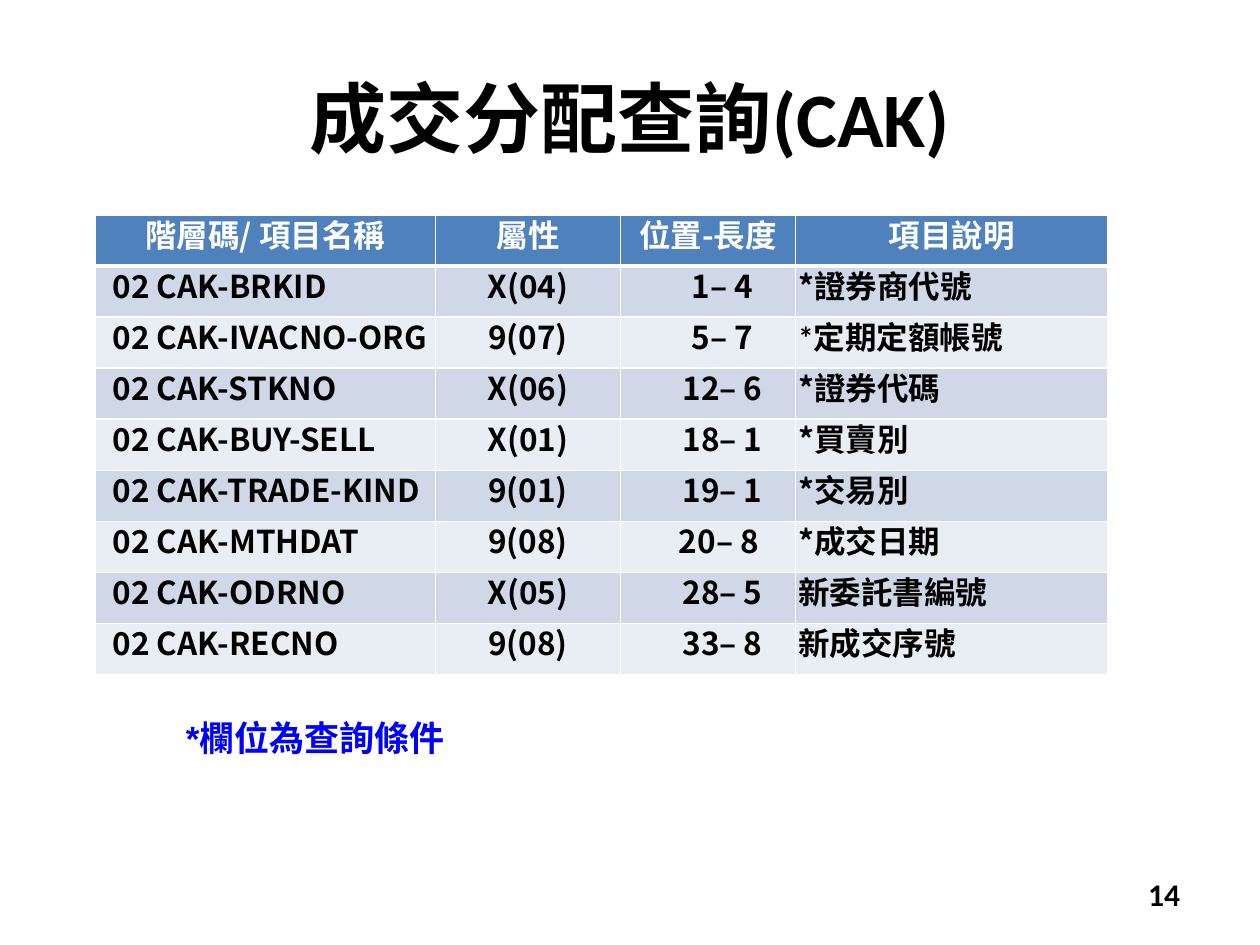
from lxml.etree import SubElement
from pptx import Presentation
from pptx.dml.color import RGBColor
from pptx.enum.text import MSO_ANCHOR, PP_ALIGN
from pptx.oxml import parse_xml
from pptx.oxml.ns import qn
from pptx.util import Cm, Pt

TITLE = "成交分配查詢(CAK)"
HEADERS = ["階層碼/ 項目名稱", "屬性", "位置-長度", "項目說明"]
ROWS = [
    ("02 CAK-BRKID", "X(04)", "1– 4", "*證券商代號"),
    ("02 CAK-IVACNO-ORG", "9(07)", "5– 7", "*定期定額帳號"),
    ("02 CAK-STKNO", "X(06)", "12– 6", "*證券代碼"),
    ("02 CAK-BUY-SELL", "X(01)", "18– 1", "*買賣別"),
    ("02 CAK-TRADE-KIND", "9(01)", "19– 1", "*交易別"),
    ("02 CAK-MTHDAT", "9(08)", "20– 8 ", "*成交日期"),
    ("02 CAK-ODRNO", "X(05)", "28– 5", "新委託書編號"),
    ("02 CAK-RECNO", "9(08)", "33– 8", "新成交序號"),
]
NOTE = "*欄位為查詢條件"
PAGE_NUMBER = "14"

SC, TC = "Noto Sans CJK SC", "Noto Sans CJK TC"
HEADER_FILL, BANDS = "4F81BD", ("D0D8E8", "E9EDF4")
ROW_HEIGHT = 1.03
# width, alignment, left margin, first-line indent (cm), font
COLUMNS = [
    (6.86, PP_ALIGN.LEFT, 0.3, 0, TC),
    (3.73, PP_ALIGN.CENTER, 0, 0, TC),
    (3.53, PP_ALIGN.CENTER, 0, 0.58, TC),
    (6.3, PP_ALIGN.LEFT, 0, 0, SC),
]
LIGHT_STAR_ROW = 2
CELL_FORMAT = {
    "margin_left": Cm(0.05), "margin_right": Cm(0.05),
    "margin_top": 0, "margin_bottom": 0,
    "vertical_anchor": MSO_ANCHOR.MIDDLE,
}
A_NS = "http://schemas.openxmlformats.org/drawingml/2006/main"


def rgb(color):
    return RGBColor.from_string(color)


def write(tf, text, size, font, color, align):
    """Fill the first paragraph with one bold run and return the paragraph."""
    p = tf.paragraphs[0]
    p.alignment = align
    r = p.add_run()
    r.text = text
    for name, value in {"size": Pt(size), "bold": True, "name": font}.items():
        setattr(r.font, name, value)
    r.font.color.rgb = rgb(color)
    east_asian = font if font in (SC, TC) else TC
    SubElement(r.font._element, qn("a:ea")).set("typeface", east_asian)
    return p


def add_borders(cell, bottom):
    tcPr = cell._tc.get_or_add_tcPr()
    for i, (side, width) in enumerate(zip("LRTB", (1, 1, 1, bottom))):
        tcPr.insert(i, parse_xml(
            f'<a:ln{side} xmlns:a="{A_NS}" w="{Pt(width)}"><a:solidFill>'
            f'<a:srgbClr val="FFFFFF"/></a:solidFill></a:ln{side}>'))


def add_field_table(s):
    width = sum(column[0] for column in COLUMNS)
    count = len(ROWS) + 1
    table = s.shapes.add_table(count, len(COLUMNS), Cm(1.92), Cm(4.33),
                               Cm(width), Cm(ROW_HEIGHT * count)).table
    for column, (width, *_) in zip(table.columns, COLUMNS):
        column.width = Cm(width)
    for i, values in enumerate([HEADERS, *ROWS]):
        table.rows[i].height = Cm(ROW_HEIGHT)
        for j, (_, align, margin, indent, font) in enumerate(COLUMNS):
            cell = table.cell(i, j)
            for name, value in CELL_FORMAT.items():
                setattr(cell, name, value)
            cell.fill.solid()
            cell.fill.fore_color.rgb = rgb(BANDS[(i - 1) % 2] if i else HEADER_FILL)
            add_borders(cell, bottom=1 if i else 3)
            if i == 0:
                p = write(cell.text_frame, values[j], 18, SC, "FFFFFF", PP_ALIGN.CENTER)
            else:
                if i == LIGHT_STAR_ROW and j == 3:
                    font = "Calibri"
                p = write(cell.text_frame, values[j], 18, font, "000000", align)
                pPr = p._p.get_or_add_pPr()
                pPr.set("marL", str(Cm(margin)))
                pPr.set("indent", str(Cm(indent)))
            p.line_spacing = Pt(18)


def add_text(s, box, *text_format, anchor=MSO_ANCHOR.TOP):
    tf = s.shapes.add_textbox(*map(Cm, box)).text_frame
    tf.word_wrap = True
    tf.vertical_anchor = anchor
    write(tf, *text_format)


def main():
    prs = Presentation()
    prs.slide_width, prs.slide_height = Cm(25.4), Cm(19.05)
    s = prs.slides.add_slide(prs.slide_layouts[5])

    title = s.shapes.title
    title.left, title.top, title.width, title.height = map(Cm, (1.27, 0.76, 22.86, 3.18))
    title.text_frame.vertical_anchor = MSO_ANCHOR.MIDDLE
    write(title.text_frame, TITLE, 44, "Calibri", "000000", PP_ALIGN.CENTER)

    add_field_table(s)
    add_text(s, (3.5, 14.32, 18.8, 1.11), NOTE, 20, "Arial", "0000FF", PP_ALIGN.LEFT)
    add_text(s, (18.11, 17.52, 5.93, 1.01), PAGE_NUMBER, 18, "Calibri", "000000",
             PP_ALIGN.RIGHT, anchor=MSO_ANCHOR.MIDDLE)
    prs.save("out.pptx")


if __name__ == "__main__":
    main()
